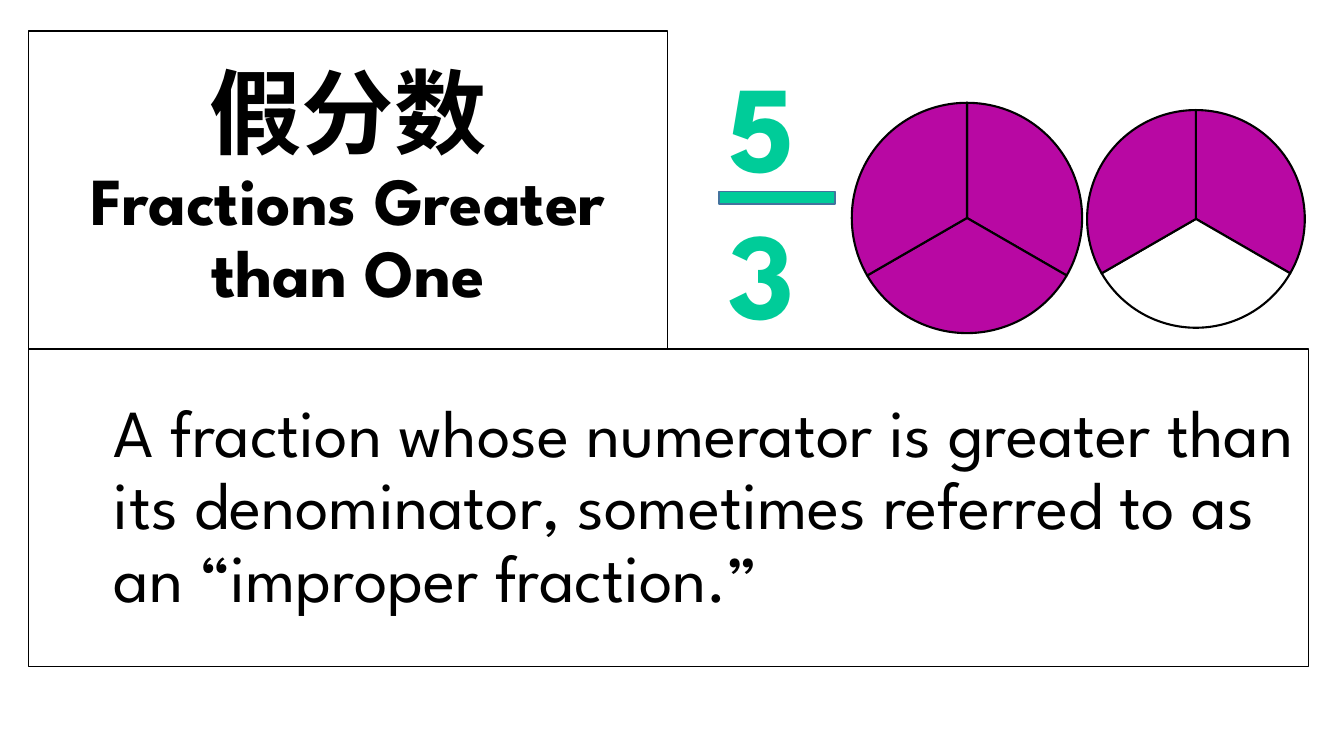
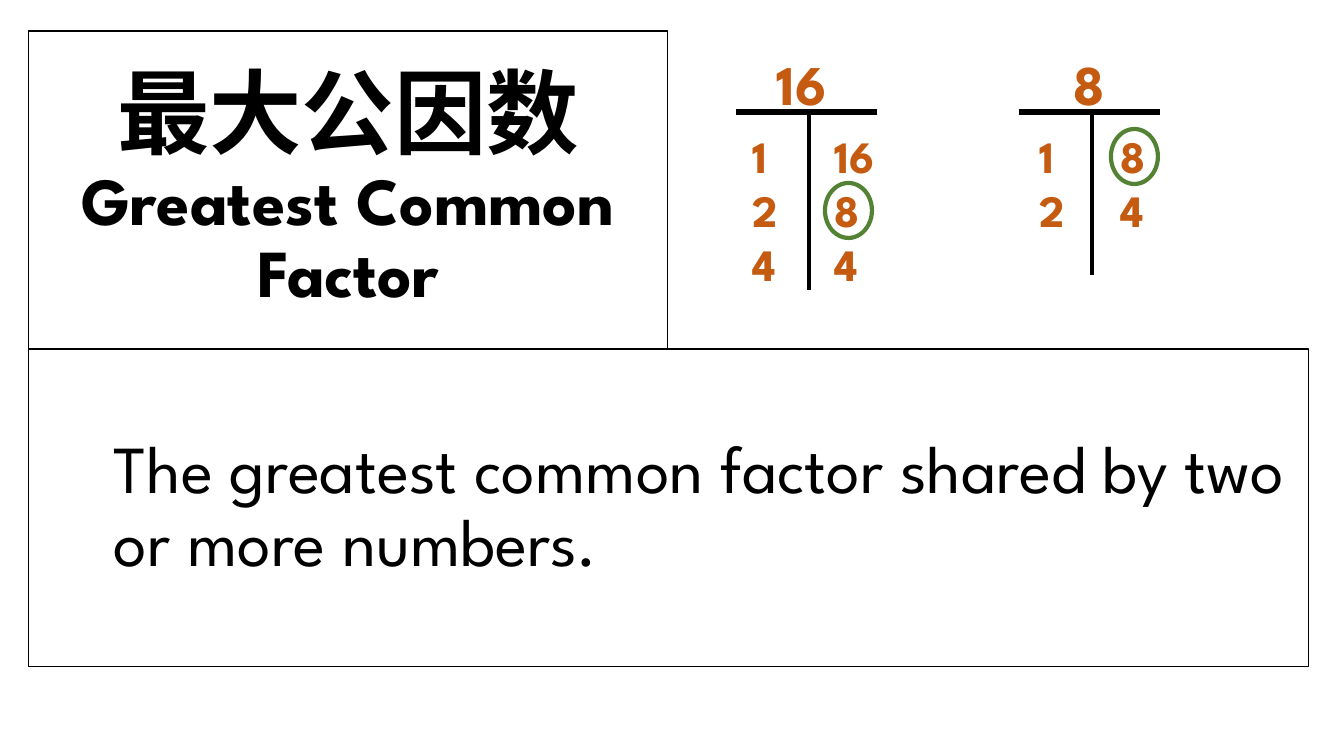
import lxml.etree
import pptx
import pptx.chart.data
import pptx.dml.color
import pptx.enum.chart
import pptx.enum.shapes
import pptx.enum.text
import pptx.oxml.ns
import pptx.util

EMU_PER_PX = 914400 / 100.8
SLIDE_SIZE = (1344, 756)
TITLE_BOX = (28, 31, 640, 318)
BODY_BOX = (28, 349, 1281, 318)
BODY_INDENT = 76

BLACK, WHITE = "000000", "FFFFFF"
TEAL, TEAL_EDGE = "00CC99", "43739E"
PURPLE, ORANGE, GREEN = "B808A3", "C55A11", "548235"
LATIN_FONT, CHINESE_FONT = "League Spartan", "Roboto"

SHAPE = pptx.enum.shapes.MSO_SHAPE
ALIGN = pptx.enum.text.PP_ALIGN
ANCHOR = pptx.enum.text.MSO_ANCHOR
qn = pptx.oxml.ns.qn


def px(*lengths):
    return [pptx.util.Emu(round(length * EMU_PER_PX)) for length in lengths]


def rgb(value):
    return pptx.dml.color.RGBColor.from_string(value)


def apply_format(target, values):
    for name, value in values.items():
        setattr(target, name, value)


def style_line(line, color, points):
    line.color.rgb = rgb(color)
    line.width = pptx.util.Pt(points)


def add_run(paragraph, text, size, color, bold=False, name=LATIN_FONT):
    run = paragraph.add_run()
    run.text = text
    apply_format(run.font, {"name": name, "size": pptx.util.Pt(size), "bold": bold})
    run.font.color.rgb = rgb(color)


def add_outline(shapes, kind, box, color, points, fill=None):
    """Add a preset shape with a line and, if given, a fill."""
    shape = shapes.add_shape(kind, *px(*box))
    shape.shadow.inherit = False
    if fill:
        shape.fill.solid()
        shape.fill.fore_color.rgb = rgb(fill)
    else:
        shape.fill.background()
    style_line(shape.line, color, points)
    return shape


def add_panel(slide, box, alignment):
    """Add an outlined text panel and return its first paragraph."""
    frame = add_outline(slide.shapes, SHAPE.RECTANGLE, box, BLACK, 0.75).text_frame
    apply_format(frame, {"word_wrap": True, "vertical_anchor": ANCHOR.MIDDLE})
    paragraph = frame.paragraphs[0]
    apply_format(paragraph, {"alignment": alignment, "line_spacing": 0.9})
    return paragraph


def add_term(slide, chinese, english, definition):
    title = add_panel(slide, TITLE_BOX, ALIGN.CENTER)
    add_run(title, chinese, 66, BLACK, True, CHINESE_FONT)
    title.add_line_break()
    add_run(title, english, 48, BLACK, True)

    body = add_panel(slide, BODY_BOX, ALIGN.LEFT)
    properties = body._p.get_or_add_pPr()
    properties.set("marL", str(px(BODY_INDENT)[0]))
    properties.set("indent", "0")
    add_run(body, definition, 48, BLACK)


def add_numbers(shapes, box, numbers, size, color):
    """Stack bold numbers, one paragraph each."""
    frame = shapes.add_textbox(*px(*box)).text_frame
    frame.word_wrap = True
    for index, number in enumerate(numbers):
        paragraph = frame.add_paragraph() if index else frame.paragraphs[0]
        add_run(paragraph, number, size, color, True)


def add_fraction(slide, left, top, numerator, denominator):
    shapes = slide.shapes.add_group_shape().shapes
    add_numbers(shapes, (left + 21, top, 144, 308), (numerator, denominator), 88, TEAL)
    bar_box = (left, top + 128, 158, 52)
    add_outline(shapes, SHAPE.MATH_MINUS, bar_box, TEAL_EDGE, 1, TEAL)


def add_pie(slide, center_x, center_y, side, colors):
    """Add a pie of equal parts in a square frame around its centre."""
    data = pptx.chart.data.CategoryChartData()
    data.categories = [str(part + 1) for part in range(len(colors))]
    data.add_series("Series 1", [33] * len(colors))
    chart = slide.shapes.add_chart(
        pptx.enum.chart.XL_CHART_TYPE.PIE,
        *px(center_x - side / 2, center_y - side / 2, side, side), data).chart
    apply_format(chart, {"has_title": False, "has_legend": False})
    apply_format(chart.font, {"name": "Calibri", "size": pptx.util.Pt(10)})
    chart.font.color.rgb = rgb(BLACK)
    plot = chart.plots[0]
    plot.vary_by_categories = False
    for index, color in enumerate(colors):
        part = plot.series[0].points[index].format
        part.fill.solid()
        part.fill.fore_color.rgb = rgb(color)
        style_line(part.line, BLACK, 1.5)
    set_plot_margin(chart, 0.05)


def set_plot_margin(chart, margin):
    plot_area = chart._chartSpace.chart.plotArea
    for layout in plot_area.findall(qn("c:layout")):
        plot_area.remove(layout)
    layout = lxml.etree.Element(qn("c:layout"))
    manual = lxml.etree.SubElement(layout, qn("c:manualLayout"))
    extent = round(1 - 2 * margin, 2)
    settings = {"layoutTarget": "inner", "xMode": "edge", "yMode": "edge",
                "x": margin, "y": margin, "w": extent, "h": extent}
    for name, value in settings.items():
        lxml.etree.SubElement(manual, qn(f"c:{name}")).set("val", str(value))
    plot_area.insert(0, layout)


def add_rule(shapes, start, end, points):
    connector = shapes.add_connector(
        pptx.enum.shapes.MSO_CONNECTOR.STRAIGHT, *px(*start, *end))
    style_line(connector.line, BLACK, points)
    lxml.etree.SubElement(connector._element.spPr, qn("a:effectLst"))


def add_factor_table(slide, left, top, stem, number, number_left, columns, circled_row):
    """Add a T of factors; columns maps each offset from left to its factors."""
    middle = left + 73
    rules = slide.shapes.add_group_shape().shapes
    add_rule(rules, (middle, top), (middle, top + stem), 3)
    add_rule(rules, (left, top), (left + 141, top), 4.5)
    add_numbers(slide.shapes, (left + number_left, top - 67, 93, 78), [number], 40, ORANGE)
    for offset, factors in columns.items():
        column_box = (left + offset, top + 12, 73, 11 + 54 * len(factors))
        add_numbers(slide.shapes, column_box, factors, 32, ORANGE)
    circle_box = (left + max(columns), top + 17 + 54 * circled_row, 47, 55)
    add_outline(slide.shapes, SHAPE.OVAL, circle_box, GREEN, 3)


def build_improper_fractions(slide):
    add_term(slide, "假分数", "Fractions Greater than One",
             "A fraction whose numerator is greater than its denominator, "
             "sometimes referred to as an “improper fraction.”")
    add_fraction(slide, 698, 44, "5", "3")
    add_pie(slide, 967, 218, 256, [PURPLE, PURPLE, PURPLE])
    add_pie(slide, 1196, 219, 242, [PURPLE, WHITE, PURPLE])


def build_common_factor(slide):
    add_term(slide, "最大公因数", "Greatest Common Factor",
             "The greatest common factor shared by two or more numbers.")
    add_factor_table(slide, 736, 112, 178, "16", 31,
                     {7: ["1", "2", "4"], 89: ["16", "8", "4"]}, 1)
    add_factor_table(slide, 1019, 112, 163, "8", 45,
                     {11: ["1", "2"], 92: ["8", "4"]}, 0)


def main():
    presentation = pptx.Presentation()
    presentation.slide_width, presentation.slide_height = px(*SLIDE_SIZE)
    for build in (build_improper_fractions, build_common_factor):
        build(presentation.slides.add_slide(presentation.slide_layouts[6]))
    presentation.save("out.pptx")


if __name__ == "__main__":
    main()
